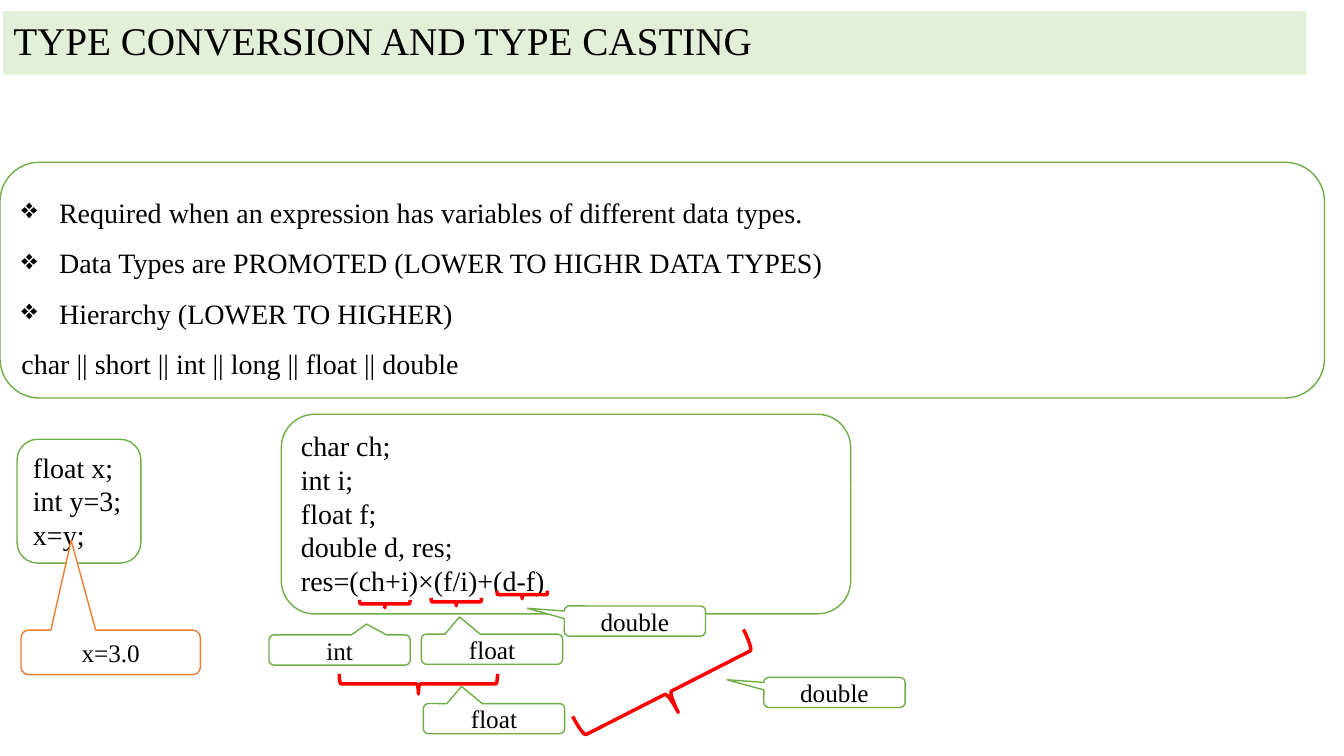
from pptx import Presentation
from pptx.dml.color import RGBColor
from pptx.enum.shapes import MSO_SHAPE
from pptx.enum.text import MSO_ANCHOR, PP_ALIGN
from pptx.oxml import parse_xml
from pptx.oxml.ns import nsdecls
from pptx.util import Cm, Pt

PANEL = MSO_SHAPE.FLOWCHART_ALTERNATE_PROCESS
CALLOUT = MSO_SHAPE.ROUNDED_RECTANGULAR_CALLOUT
BRACE = MSO_SHAPE.LEFT_BRACE
TOP, MIDDLE = MSO_ANCHOR.TOP, MSO_ANCHOR.MIDDLE
LEFT, CENTER = PP_ALIGN.LEFT, PP_ALIGN.CENTER

FONT = "Times New Roman"
BLACK, WHITE, RED = "000000", "FFFFFF", "FF0000"
GREEN, PALE_GREEN, ORANGE = "70AD47", "E2F0D9", "ED7D31"
LABEL_SIZE = (3.56, 0.76)
SMALL_BRACE = (0.2, 1.27)

RULES = [
    "Required when an expression has variables of different data types.",
    "Data Types are PROMOTED (LOWER TO HIGHR DATA TYPES)",
    "Hierarchy (LOWER TO HIGHER)",
]
HIERARCHY = "char || short || int || long || float || double"
ASSIGNMENT = ["float x;", "int y=3;", "x=y;"]
EXPRESSION = ["char ch;", "int i;", "float f;", "double d, res;",
              "res=(ch+i)×(f/i)+(d-f)"]

# Offsets from the expression panel
BRACES = [
    (2.51, 4.14, SMALL_BRACE, 270),
    (4.31, 4.09, SMALL_BRACE, 270),
    (5.97, 3.91, SMALL_BRACE, 270),
    (3.2, 4.8, (0.51, 3.99), 270),
    (9.19, 4.6, (1.12, 4.83), 243),
]
RESULT_TYPES = [
    ("int", -0.31, 5.56, (0.19, -0.86)),
    ("float", 3.53, 5.54, (-0.23, -1.07)),
    ("double", 7.13, 4.83, (-0.76, -0.42)),
    ("float", 3.58, 7.29, (-0.23, -1.07)),
    ("double", 12.16, 6.63, (-0.76, -0.42)),
]


def color(value):
    return RGBColor.from_string(value)


def write_lines(shape, lines, size, alignment=LEFT, anchor=TOP, spacing=1.0):
    text_frame = shape.text_frame
    text_frame.word_wrap = True
    text_frame.vertical_anchor = anchor
    text_frame.text = "\n".join(lines)
    for paragraph in text_frame.paragraphs:
        paragraph.alignment = alignment
        paragraph.line_spacing = spacing
        paragraph.space_before = Pt(0)
        for run in paragraph.runs:
            run.font.name = FONT
            run.font.size = Pt(size)
            run.font.color.rgb = color(BLACK)


def add_outline(slide, kind, box, line, width=1, fill=None):
    shape = slide.shapes.add_shape(kind, *map(Cm, box))
    shape.shadow.inherit = False
    if fill:
        shape.fill.solid()
        shape.fill.fore_color.rgb = color(fill)
    else:
        shape.fill.background()
    shape.line.color.rgb = color(line)
    shape.line.width = Pt(width)
    return shape


def add_callout(slide, box, text, tip, line=GREEN):
    callout = add_outline(slide, CALLOUT, box, line, fill=WHITE)
    callout.adjustments[0], callout.adjustments[1] = tip
    write_lines(callout, [text], 18, CENTER, MIDDLE)


def add_title(slide, box):
    title = slide.shapes.title
    title.left, title.top, title.width, title.height = map(Cm, box)
    # Rounded outline for the placeholder
    title.element.spPr.append(parse_xml(
        f'<a:prstGeom {nsdecls("a")} prst="flowChartAlternateProcess">'
        '<a:avLst/></a:prstGeom>'))
    title.fill.solid()
    title.fill.fore_color.rgb = color(PALE_GREEN)
    write_lines(title, ["TYPE CONVERSION AND TYPE CASTING"], 28)


def add_rules(slide, box):
    panel = add_outline(slide, PANEL, box, GREEN)
    write_lines(panel, RULES + [HIERARCHY], 20, spacing=1.5)
    # Diamond bullets on all but the hierarchy line
    for paragraph in panel.text_frame.paragraphs[:len(RULES)]:
        properties = paragraph._p.get_or_add_pPr()
        properties.set("marL", str(Cm(0.95)))
        properties.set("indent", str(-Cm(0.95)))
        properties.append(parse_xml(f'<a:buChar {nsdecls("a")} char="❖"/>'))


def add_assignment(slide, box):
    left, top, width, height = box
    panel = add_outline(slide, PANEL, box, GREEN)
    write_lines(panel, ASSIGNMENT, 20)
    add_callout(slide, (left + 0.1, top + 4.81, 4.52, 1.12), "x=3.0",
                (-0.22, -2.52), ORANGE)


def add_expression(slide, box):
    left, top, width, height = box
    panel = add_outline(slide, PANEL, box, GREEN)
    write_lines(panel, EXPRESSION, 20)
    # Braces under the operands
    for x, y, size, rotation in BRACES:
        brace = add_outline(slide, BRACE, (left + x, top + y, *size), RED, 2.5)
        brace.rotation = rotation
    # Type that each operation gives
    for name, x, y, tip in RESULT_TYPES:
        add_callout(slide, (left + x, top + y, *LABEL_SIZE), name, tip)


def main():
    presentation = Presentation()
    presentation.slide_width = Cm(33.87)
    presentation.slide_height = Cm(19.05)
    slide = presentation.slides.add_slide(presentation.slide_layouts[5])
    add_title(slide, (0.08, 0.28, 32.84, 1.6))
    add_rules(slide, (0, 4.09, 33.38, 5.94))
    add_assignment(slide, (0.43, 11.07, 3.12, 3.12))
    add_expression(slide, (7.09, 10.44, 14.35, 5.03))
    presentation.save("out.pptx")


if __name__ == "__main__":
    main()
